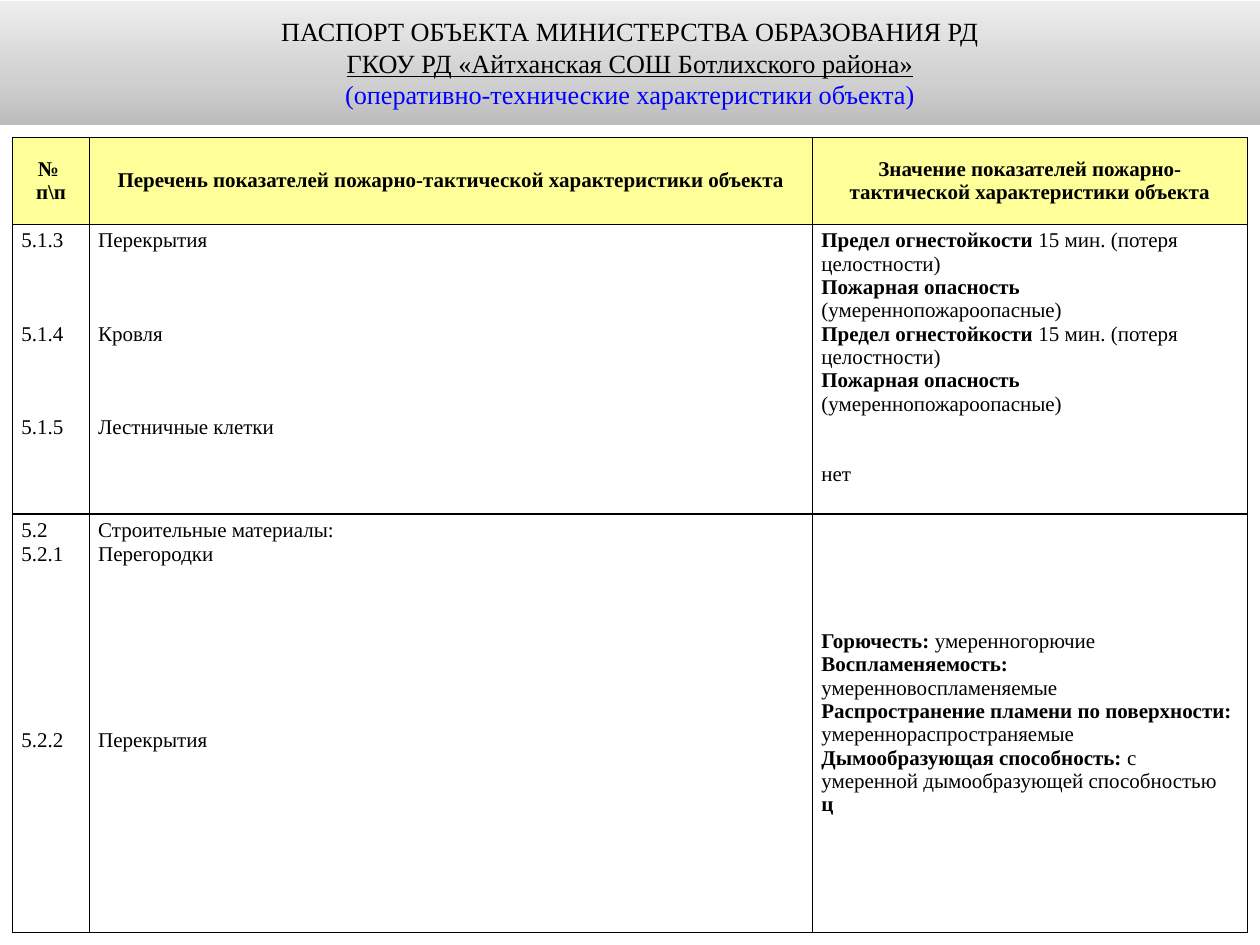
from copy import deepcopy

from lxml.etree import SubElement
from pptx import Presentation
from pptx.dml.color import RGBColor
from pptx.enum.text import MSO_ANCHOR as Anchor, MSO_AUTO_SIZE as AutoSize, PP_ALIGN as Align
from pptx.oxml.ns import qn
from pptx.util import Inches, Pt

BLACK = RGBColor(0x00, 0x00, 0x00)
BLUE = RGBColor(0x00, 0x00, 0xFF)
WHITE = RGBColor(0xFF, 0xFF, 0xFF)
YELLOW = RGBColor(0xFF, 0xFF, 0x99)
GRADIENT = [
    (0, RGBColor(0xBC, 0xBC, 0xBC)),
    (0.35, RGBColor(0xD0, 0xD0, 0xD0)),
    (1, RGBColor(0xED, 0xED, 0xED)),
]
FONT = "Times New Roman"
TABLE_LINE = 13.3  # height of one 12 pt line, in points

TITLE = [
    ("ПАСПОРТ ОБЪЕКТА МИНИСТЕРСТВА ОБРАЗОВАНИЯ РД", {}),
    ("ГКОУ РД «Айтханская СОШ Ботлихского района»", {"underline": True}),
    ("(оперативно-технические характеристики объекта)", {"color": BLUE}),
]

# A cell is a list of paragraphs: (bold text, plain text, lines skipped above)
HEADER = [
    [("№ ", "", 0), ("п\\п", "", 0)],
    [("Перечень показателей пожарно-тактической характеристики объекта", "", 0)],
    [("Значение показателей пожарно-тактической характеристики объекта", "", 0)],
]
FIRE_RATING = [
    ("Предел огнестойкости ", "15 мин. (потеря целостности)", 0),
    ("Пожарная опасность", "", 0),
    ("", "(умереннопожароопасные)", 0),
]
STRUCTURES = [
    [("", "5.1.3", 0), ("", "5.1.4", 3), ("", "5.1.5", 3)],
    [("", "Перекрытия", 0), ("", "Кровля", 3), ("", "Лестничные клетки", 3)],
    FIRE_RATING * 2 + [("", "нет", 2)],
]
MATERIALS = [
    [("", "5.2", 0), ("", "5.2.1", 0), ("", "5.2.2", 7)],
    [("", "Строительные материалы:", 0), ("", "Перегородки", 0), ("", "Перекрытия", 7)],
    [
        ("Горючесть: ", "умеренногорючие", 0),
        ("Воспламеняемость: ", "умеренновоспламеняемые", 0),
        ("Распространение пламени по поверхности:", "", 0),
        ("", "умереннораспространяемые", 0),
        ("Дымообразующая способность: ", "с умеренной дымообразующей способностью", 0),
        ("ц", "", 0),
    ],
]
ROWS = [HEADER, STRUCTURES, MATERIALS]
COLUMN_WIDTHS = [0.61, 5.74, 3.45]
ROW_HEIGHTS = [0.69, 2.3, 3.32]
MIDDLE_CELLS = {(0, 0), (0, 1), (0, 2), (2, 2)}


def add_text(paragraph, text, size=12, color=BLACK, bold=False, underline=False):
    run = paragraph.add_run()
    run.text = text
    font = run.font
    font.name, font.size = FONT, Pt(size)
    font.bold, font.underline = bold, underline
    font.color.rgb = color


def next_paragraph(frame, index):
    return frame.add_paragraph() if index else frame.paragraphs[0]


def set_margins(target, side, top):
    target.margin_left = target.margin_right = Inches(side)
    target.margin_top = target.margin_bottom = Inches(top)


def fill_gradient(shape):
    """Give the shape a vertical gradient that is darkest at the bottom."""
    shape.fill.gradient()
    shape.fill.gradient_angle = 90
    first_stop = shape._element.spPr.find(".//" + qn("a:gs"))
    first_stop.addnext(deepcopy(first_stop))
    for stop, (position, color) in zip(shape.fill.gradient_stops, GRADIENT):
        stop.position = position
        stop.color.rgb = color


def add_borders(cell):
    properties = cell._tc.get_or_add_tcPr()
    for index, side in enumerate(("lnL", "lnR", "lnT", "lnB")):
        line = properties.makeelement(qn("a:" + side), {"w": str(Pt(1))})
        solid = SubElement(line, qn("a:solidFill"))
        SubElement(solid, qn("a:srgbClr"), val=str(BLACK))
        properties.insert(index, line)


def format_title(shape):
    shape.left, shape.top = Inches(0), Inches(0.01)
    shape.width, shape.height = Inches(10), Inches(0.98)
    fill_gradient(shape)
    frame = shape.text_frame
    frame.word_wrap = True
    frame.auto_size = AutoSize.NONE
    frame.vertical_anchor = Anchor.MIDDLE
    set_margins(frame, 0.09, 0.05)
    for index, (text, style) in enumerate(TITLE):
        paragraph = next_paragraph(frame, index)
        paragraph.alignment = Align.CENTER
        paragraph.line_spacing = Pt(18)
        paragraph.space_before = Pt(0)
        add_text(paragraph, text, size=15, **style)


def fill_cell(cell, paragraphs, header, middle):
    cell.fill.solid()
    cell.fill.fore_color.rgb = YELLOW if header else WHITE
    cell.vertical_anchor = Anchor.MIDDLE if middle else Anchor.TOP
    set_margins(cell, 0.07, 0.04)
    add_borders(cell)
    for index, (bold_text, plain_text, skipped) in enumerate(paragraphs):
        paragraph = next_paragraph(cell.text_frame, index)
        paragraph.alignment = Align.CENTER if header else Align.LEFT
        paragraph.space_before = Pt(skipped * TABLE_LINE)
        for text, bold in ((bold_text, True), (plain_text, False)):
            if text:
                add_text(paragraph, text, bold=bold)


def add_passport_table(slide):
    table = slide.shapes.add_table(
        len(ROWS), len(COLUMN_WIDTHS), Inches(0.1), Inches(1.09),
        Inches(sum(COLUMN_WIDTHS)), Inches(sum(ROW_HEIGHTS)),
    ).table
    for column, width in zip(table.columns, COLUMN_WIDTHS):
        column.width = Inches(width)
    for row, height in zip(table.rows, ROW_HEIGHTS):
        row.height = Inches(height)
    for r, cells in enumerate(ROWS):
        for c, paragraphs in enumerate(cells):
            fill_cell(table.cell(r, c), paragraphs, r == 0, (r, c) in MIDDLE_CELLS)


def main():
    presentation = Presentation()
    presentation.slide_width, presentation.slide_height = Inches(10), Inches(7.5)
    slide = presentation.slides.add_slide(presentation.slide_layouts[5])
    format_title(slide.shapes.title)
    add_passport_table(slide)
    presentation.save("out.pptx")


if __name__ == "__main__":
    main()
